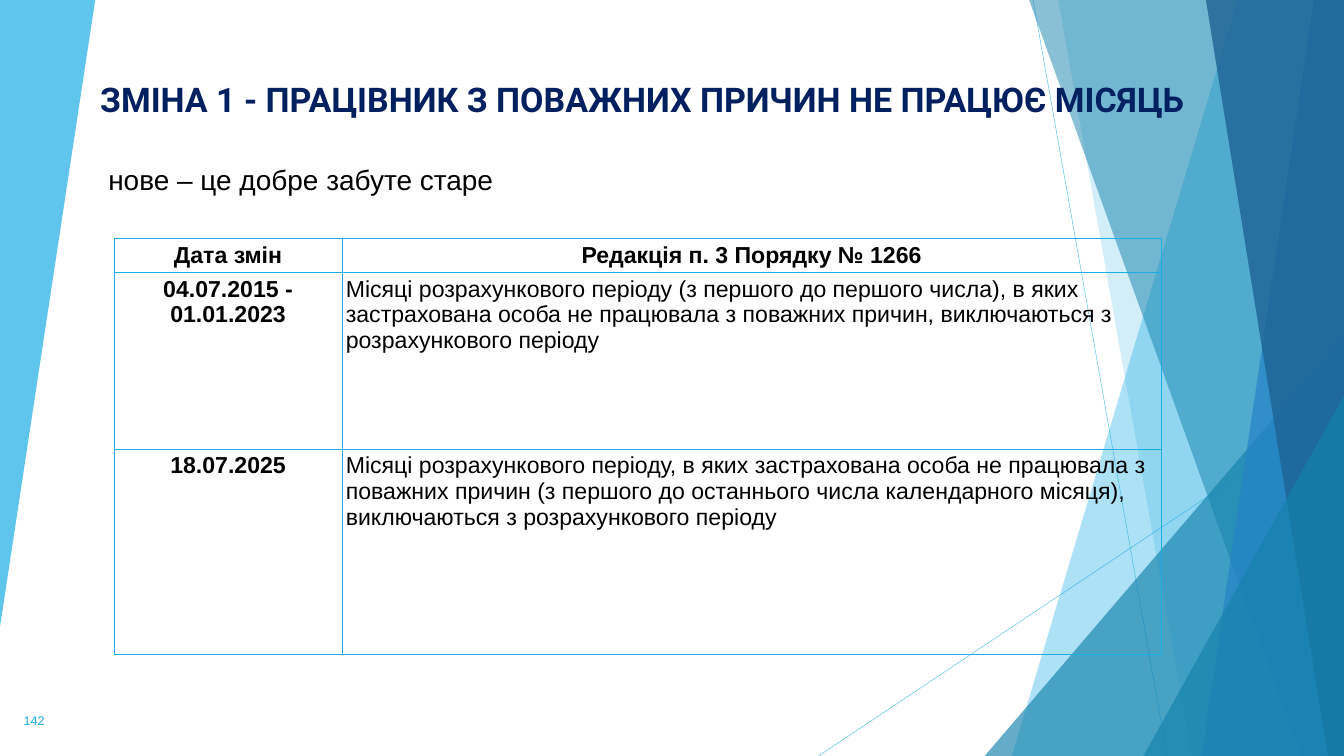
from lxml.etree import SubElement
from pptx import Presentation
from pptx.dml.color import RGBColor
from pptx.enum.shapes import MSO_CONNECTOR, MSO_SHAPE
from pptx.enum.text import MSO_ANCHOR, MSO_AUTO_SIZE, PP_ALIGN
from pptx.oxml.ns import qn
from pptx.util import Cm, Pt

WIDTH, HEIGHT = 67.74, 38.1
SKY, TEAL, BLUE, NAVY = "1CADE4", "1482AC", "2683C6", "1D6294"
BLACK, TITLE_COLOUR = "000000", "002060"

TITLE = "ЗМІНА 1 - ПРАЦІВНИК З ПОВАЖНИХ ПРИЧИН НЕ ПРАЦЮЄ МІСЯЦЬ"
SUBTITLE = "нове – це добре забуте старе"
PAGE_NUMBER = "142"
REVISIONS = [
    ("Дата змін", "Редакція п. 3 Порядку № 1266"),
    ("04.07.2015 - 01.01.2023",
     "Місяці розрахункового періоду (з першого до першого числа), в яких "
     "застрахована особа не працювала з поважних причин, виключаються з "
     "розрахункового періоду"),
    ("18.07.2025",
     "Місяці розрахункового періоду, в яких застрахована особа не працювала з "
     "поважних причин (з першого до останнього числа календарного місяця), "
     "виключаються з розрахункового періоду"),
]
COLUMN_WIDTHS = [11.51, 41.27]
ROW_HEIGHTS = [1.75, 8.89, 10.34]

RAYS = [((52.07, 0), (58.83, HEIGHT)), ((WIDTH, 20.45), (41.25, HEIGHT))]
LEFT_WEDGE = [(0, 0), (4.8, 0), (0, 31.6)]
RIGHT_SHARDS = [
    ("band", 62.38, 51, SKY, 36),
    ("band", 53.34, 60.07, SKY, 20),
    ("triangle", 49.63, 16.94, TEAL, 66),
    ("band", 51.87, 65.58, TEAL, 50),
    ("band", 66.22, 60.55, BLUE, 70),
    ("band", 60.78, 66.93, NAVY, 80),
    ("triangle", 57.63, 19.94, TEAL, 66),
]


def rgb(colour):
    return RGBColor.from_string(colour)


def set_alpha(fill_parent, percent):
    colour = next(fill_parent.iter(qn("a:srgbClr")))
    SubElement(colour, qn("a:alpha"), val=str(percent * 1000))


def paint(shape, colour, opacity):
    shape.shadow.inherit = False
    shape.fill.solid()
    shape.fill.fore_color.rgb = rgb(colour)
    set_alpha(shape._element.spPr, opacity)
    shape.line.fill.background()


def add_polygon(shapes, points, colour, opacity):
    builder = shapes.build_freeform(*map(Cm, points[0]))
    builder.add_line_segments([(Cm(x), Cm(y)) for x, y in points[1:]])
    paint(builder.convert_to_shape(), colour, opacity)


def add_ray(shapes, start, end):
    ray = shapes.add_connector(MSO_CONNECTOR.STRAIGHT, *map(Cm, start + end))
    ray.line.color.rgb = rgb(SKY)
    ray.line.width = Pt(0.75)
    properties = ray._element.spPr
    set_alpha(properties, 70)
    SubElement(properties, qn("a:effectLst"))


def add_shard(shapes, kind, first, second, colour, opacity):
    if kind == "band":
        points = [(first, 0), (WIDTH, 0), (WIDTH, HEIGHT), (second, HEIGHT)]
        add_polygon(shapes, points, colour, opacity)
    else:
        triangle = shapes.add_shape(
            MSO_SHAPE.ISOSCELES_TRIANGLE, Cm(first), Cm(second),
            Cm(WIDTH - first), Cm(HEIGHT - second))
        triangle.adjustments[0] = 1
        paint(triangle, colour, opacity)


def write(frame, text, size, colour, bold=False, font="Arial", align=PP_ALIGN.LEFT):
    frame.text = text
    frame.word_wrap = True
    paragraph = frame.paragraphs[0]
    paragraph.alignment = align
    for run in paragraph.runs:
        run.font.name = font
        run.font.size = Pt(size)
        run.font.bold = bold
        run.font.color.rgb = rgb(colour)


def add_label(shapes, box, text, size, colour, anchor):
    frame = shapes.add_textbox(*map(Cm, box)).text_frame
    frame.vertical_anchor = anchor
    write(frame, text, size, colour)


def place_title(slide):
    title = slide.shapes.title
    slide.shapes._spTree.append(title._element)
    title.left, title.top, title.width, title.height = map(Cm, (4.72, 0.56, 59.54, 5.66))
    frame = title.text_frame
    frame.margin_left = frame.margin_right = Cm(0.33)
    frame.margin_top = frame.margin_bottom = Cm(0.18)
    frame.vertical_anchor = MSO_ANCHOR.BOTTOM
    frame.auto_size = MSO_AUTO_SIZE.NONE
    write(frame, TITLE, 48.5, TITLE_COLOUR, bold=True, font="Roboto")
    frame.paragraphs[0].line_spacing = 0.9


def border(cell):
    properties = cell._tc.get_or_add_tcPr()
    for side in ("lnL", "lnR", "lnT", "lnB"):
        line = SubElement(properties, qn(f"a:{side}"), w=str(Pt(1)))
        SubElement(SubElement(line, qn("a:solidFill")), qn("a:srgbClr"), val=SKY)


def add_revisions(shapes):
    table = shapes.add_table(
        len(REVISIONS), len(COLUMN_WIDTHS), Cm(5.74), Cm(11.99),
        Cm(sum(COLUMN_WIDTHS)), Cm(sum(ROW_HEIGHTS))).table
    table.first_row = table.horz_banding = False
    for column, width in zip(table.columns, COLUMN_WIDTHS):
        column.width = Cm(width)
    for r, (revision, height) in enumerate(zip(REVISIONS, ROW_HEIGHTS)):
        table.rows[r].height = Cm(height)
        for c, text in enumerate(revision):
            cell = table.cell(r, c)
            heading = r == 0 or c == 0
            border(cell)
            cell.fill.background()
            cell.margin_left = cell.margin_right = Cm(0.18)
            cell.margin_top = cell.margin_bottom = Cm(0.18)
            cell.vertical_anchor = MSO_ANCHOR.MIDDLE if r == 0 else MSO_ANCHOR.TOP
            write(cell.text_frame, text, 33, BLACK, bold=heading,
                  align=PP_ALIGN.CENTER if heading else PP_ALIGN.LEFT)


def main():
    deck = Presentation()
    deck.slide_width, deck.slide_height = Cm(WIDTH), Cm(HEIGHT)
    slide = deck.slides.add_slide(deck.slide_layouts[5])
    shapes = slide.shapes
    add_polygon(shapes, LEFT_WEDGE, SKY, 70)
    for start, end in RAYS:
        add_ray(shapes, start, end)
    for shard in RIGHT_SHARDS:
        add_shard(shapes, *shard)
    add_label(shapes, (0.94, 35.31, 2.92, 2.03), PAGE_NUMBER, 18, SKY, MSO_ANCHOR.MIDDLE)
    add_label(shapes, (5.21, 8.05, 58.55, 2.2), SUBTITLE, 40, BLACK, MSO_ANCHOR.TOP)
    place_title(slide)
    add_revisions(shapes)
    deck.save("out.pptx")


if __name__ == "__main__":
    main()
